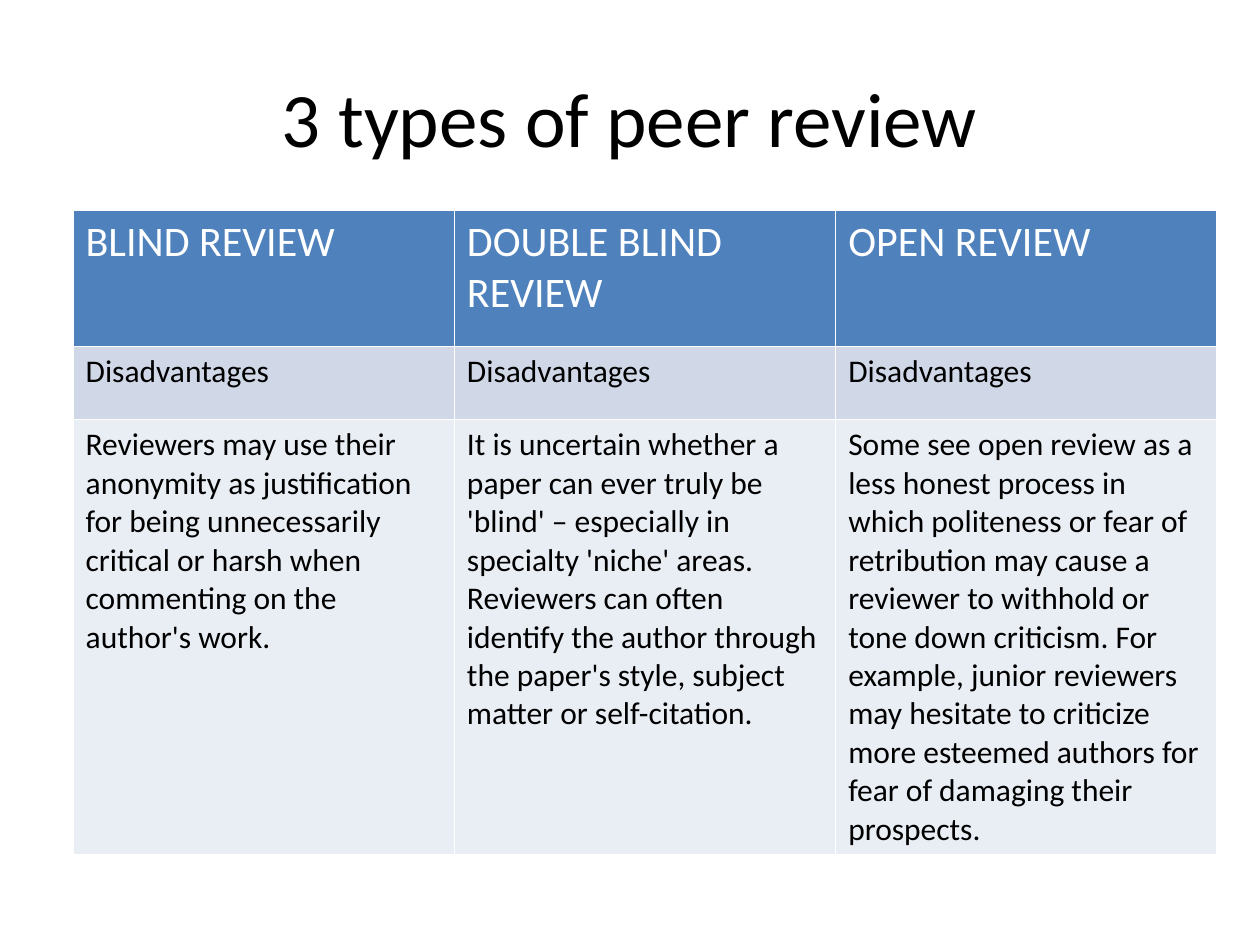
"""Build a slide comparing the disadvantages of three types of peer review."""
from pptx import Presentation
from pptx import util as u
from pptx.dml.color import RGBColor
from pptx.enum import text

TITLE = "3 types of peer review"
REVIEWS = [
    ("BLIND REVIEW",
     "Reviewers may use their anonymity as justification for being unnecessarily "
     "critical or harsh when commenting on the author's work."),
    ("DOUBLE BLIND REVIEW",
     "It is uncertain whether a paper can ever truly be 'blind' – especially in "
     "specialty 'niche' areas. Reviewers can often identify the author through "
     "the paper's style, subject matter or self-citation."),
    ("OPEN REVIEW",
     "Some see open review as a less honest process in which politeness or fear of "
     "retribution may cause a reviewer to withhold or tone down criticism. For "
     "example, junior reviewers may hesitate to criticize more esteemed authors "
     "for fear of damaging their prospects."),
]
ROW_LABEL = "Disadvantages"
THEME = {
    "font": "Calibri",
    "title": {"size": 44, "color": "000000"},
    "rows": [
        {"size": 24, "color": "FFFFFF", "fill": "4F81BD"},
        {"size": 18, "color": "000000", "fill": "D0D8E8"},
        {"size": 18, "color": "000000", "fill": "E9EDF4"},
    ],
}
SLIDE = (10, 7.5)
TITLE_BOX = (0.5, 0.3, 9, 1.25)
TABLE_LEFT, TABLE_TOP, TABLE_WIDTH = 0.58, 1.67, 9.08
ROW_HEIGHTS = (1.08, 0.58, 3.4)


def write(frame, words, style):
    """Put one styled run into the first paragraph of a text frame."""
    span = frame.paragraphs[0].add_run()
    span.text = words
    formats = {"name": THEME["font"], "size": u.Pt(style["size"]), "bold": False}
    for name, value in formats.items():
        setattr(span.font, name, value)
    span.font.color.rgb = RGBColor.from_string(style["color"])


def add_title(page):
    """Add the centred slide title."""
    frame = page.shapes.add_textbox(*map(u.Inches, TITLE_BOX)).text_frame
    formats = {"word_wrap": True, "vertical_anchor": text.MSO_ANCHOR.MIDDLE}
    for name, value in formats.items():
        setattr(frame, name, value)
    write(frame, TITLE, THEME["title"])
    frame.paragraphs[0].alignment = text.PP_ALIGN.CENTER


def add_reviews(page):
    """Add the table with one column for each type of review."""
    bounds = (TABLE_LEFT, TABLE_TOP, TABLE_WIDTH, sum(ROW_HEIGHTS))
    table = page.shapes.add_table(
        len(ROW_HEIGHTS), len(REVIEWS), *map(u.Inches, bounds)).table
    for row, height in zip(table.rows, ROW_HEIGHTS):
        row.height = u.Inches(height)
    for column, (heading, drawback) in enumerate(REVIEWS):
        for row, words in enumerate((heading, ROW_LABEL, drawback)):
            cell, style = table.cell(row, column), THEME["rows"][row]
            cell.fill.solid()
            cell.fill.fore_color.rgb = RGBColor.from_string(style["fill"])
            write(cell.text_frame, words, style)


def main():
    """Create and save the deck."""
    deck = Presentation()
    deck.slide_width, deck.slide_height = map(u.Inches, SLIDE)
    page = deck.slides.add_slide(deck.slide_layouts[6])
    add_reviews(page)
    add_title(page)
    deck.save("out.pptx")


if __name__ == "__main__":
    main()
